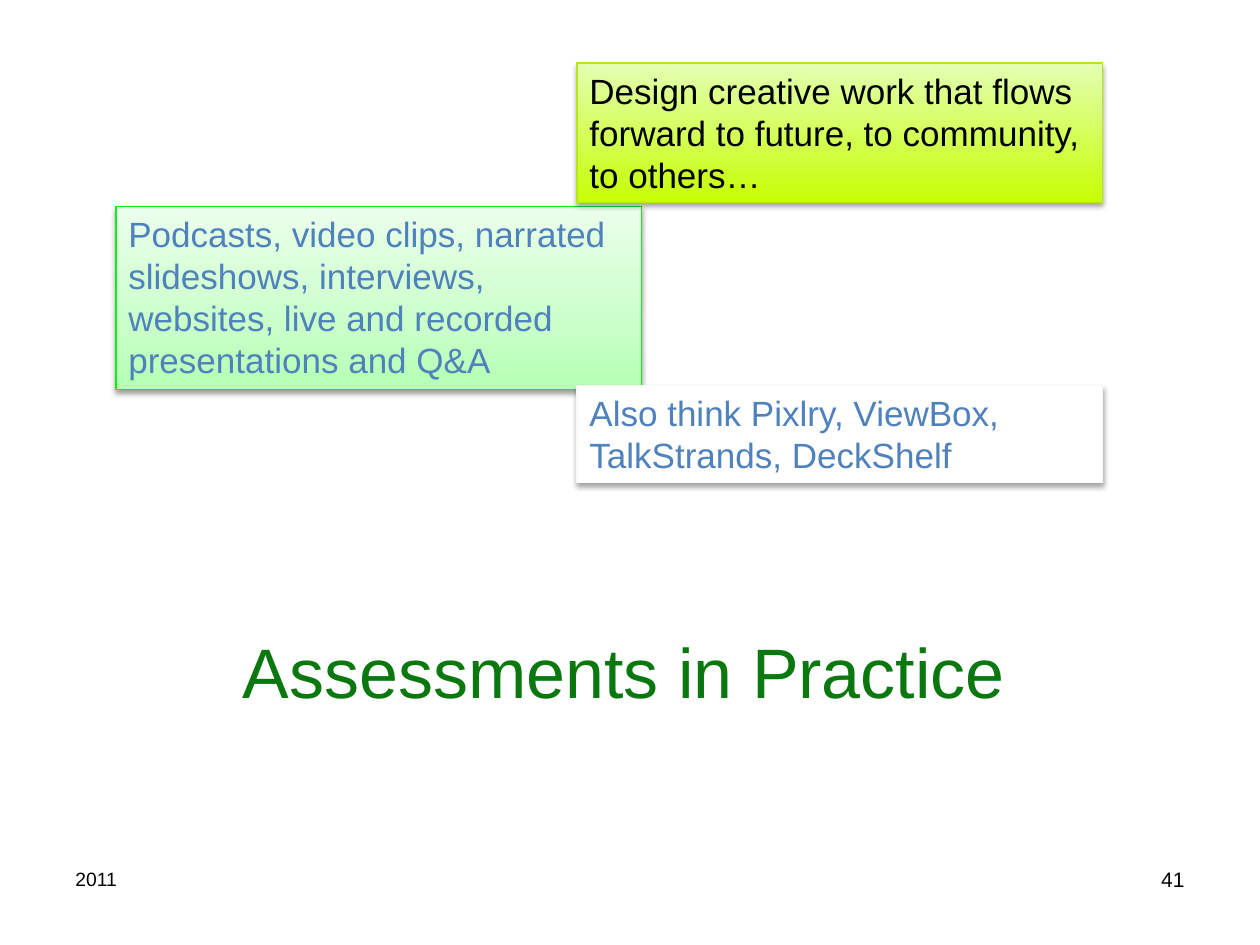
from pptx import Presentation
from pptx.dml.color import RGBColor
from pptx.enum.shapes import MSO_SHAPE
from pptx.enum.text import MSO_ANCHOR, PP_ALIGN
from pptx.oxml.ns import qn
from pptx.util import Inches, Pt
from lxml.etree import SubElement

W, H = 10, 7.5
CARD_W = 4.17
LEFT_COL, RIGHT_COL = 0.92, 4.58
FOOTER_Y, FOOTER_H = 6.83, 0.52

CARDS = [
    dict(text="Podcasts, video clips, narrated slideshows, interviews, websites, "
              "live and recorded presentations and Q&A",
         x=LEFT_COL, y=1.64, h=1.45, color="4F81BD", line="12EC1C",
         fill=[(0, "B4FFB4"), (35, "CAFFCA"), (100, "EBFFEB")], alpha=38, dist=1.6),
    dict(text="Also think Pixlry, ViewBox, TalkStrands, DeckShelf",
         x=RIGHT_COL, y=3.06, h=0.77, color="4F81BD", line="F9F9F9",
         fill=[(0, "FFFFFF")], alpha=35, dist=1.8),
    dict(text="Design creative work that flows forward to future, to community, to others…",
         x=RIGHT_COL, y=0.5, h=1.11, color="000000", line="B8E716",
         fill=[(0, "C6FF04"), (100, "E3FFB2")], alpha=35, dist=1.8),
]

LABELS = [
    ("Assessments in Practice", (1.83, 4.25, 7.08, 1.45), 40, "0A780F",
     PP_ALIGN.LEFT, MSO_ANCHOR.BOTTOM),
    ("2011", (0.5, FOOTER_Y, 0.58, FOOTER_H), 11, "000000",
     PP_ALIGN.LEFT, MSO_ANCHOR.TOP),
    ("41", (W - 1, FOOTER_Y, 0.5, FOOTER_H), 12, "000000",
     PP_ALIGN.RIGHT, MSO_ANCHOR.TOP),
]


def rgb(color):
    return RGBColor.from_string(color)


def write(sp, text, size, color, align=PP_ALIGN.LEFT, anchor=MSO_ANCHOR.TOP):
    tf = sp.text_frame
    tf.word_wrap = True
    tf.vertical_anchor = anchor
    p = tf.paragraphs[0]
    p.text = text
    p.alignment = align
    p.font.name = "Arial"
    p.font.size = Pt(size)
    p.font.color.rgb = rgb(color)


def paint(sp, stops):
    if len(stops) == 1:
        sp.fill.solid()
        sp.fill.fore_color.rgb = rgb(stops[0][1])
        return
    sp.fill.gradient()
    sp.fill.gradient_angle = 90
    gs_list = sp._element.spPr.find(qn("a:gradFill")).find(qn("a:gsLst"))
    for gs in list(gs_list):
        gs_list.remove(gs)
    for pos, color in stops:
        gs = SubElement(gs_list, qn("a:gs"), pos=str(pos * 1000))
        SubElement(gs, qn("a:srgbClr"), val=color)


def cast_shadow(sp, alpha, dist, blur=3.1):
    sp.shadow.inherit = False
    effects = sp._element.spPr.find(qn("a:effectLst"))
    shadow = SubElement(effects, qn("a:outerShdw"), blurRad=str(Pt(blur)),
                        dist=str(Pt(dist)), dir=str(90 * 60000), rotWithShape="0")
    clr = SubElement(shadow, qn("a:srgbClr"), val="000000")
    SubElement(clr, qn("a:alpha"), val=str(alpha * 1000))


def add_card(s, card):
    box = map(Inches, (card["x"], card["y"], CARD_W, card["h"]))
    sp = s.shapes.add_shape(MSO_SHAPE.RECTANGLE, *box)
    paint(sp, card["fill"])
    sp.line.color.rgb = rgb(card["line"])
    sp.line.width = Pt(0.75)
    cast_shadow(sp, card["alpha"], card["dist"])
    write(sp, card["text"], 20, card["color"])


def main():
    prs = Presentation()
    prs.slide_width, prs.slide_height = Inches(W), Inches(H)
    s = prs.slides.add_slide(prs.slide_layouts[6])
    for card in CARDS:
        add_card(s, card)
    for text, box, *style in LABELS:
        write(s.shapes.add_textbox(*map(Inches, box)), text, *style)
    prs.save("out.pptx")


if __name__ == "__main__":
    main()
